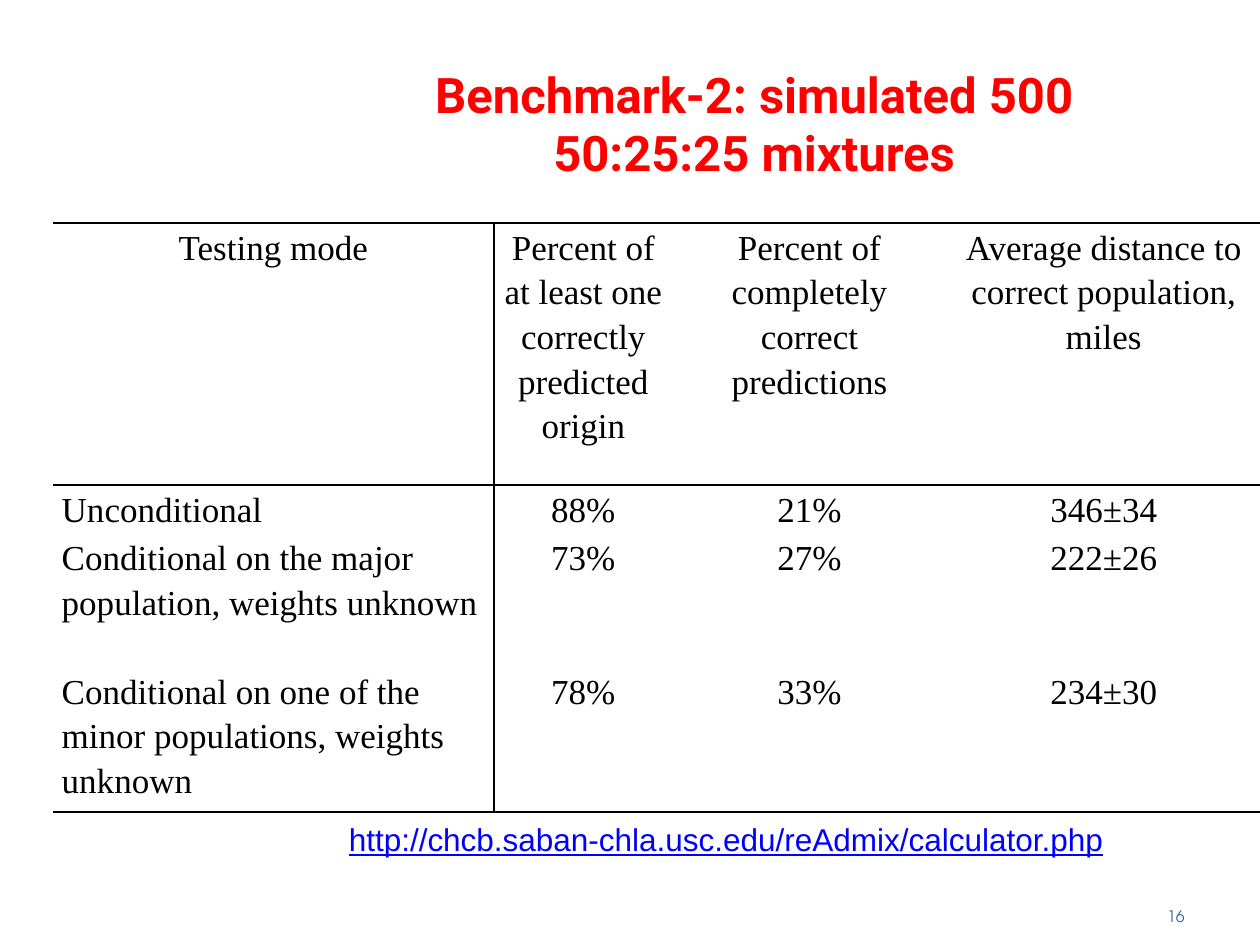
from lxml.etree import SubElement
from pptx import Presentation
from pptx.dml.color import RGBColor
from pptx.enum.text import MSO_ANCHOR, PP_ALIGN
from pptx.oxml.ns import qn
from pptx.util import Inches, Pt

RED = RGBColor(0xFF, 0x00, 0x00)
BLACK = RGBColor(0x00, 0x00, 0x00)
LINK_BLUE = RGBColor(0x00, 0x00, 0xFF)
NUMBER_BLUE = RGBColor(0x37, 0x60, 0x92)

COLUMN_WIDTHS = [3.5, 1.42, 2.17, 2.5]
ROW_HEIGHTS = [2.08, 0.36, 1.06, 1.06]
RESULTS = [
    ["Testing mode", "Percent of at least one correctly predicted origin",
     "Percent of completely correct predictions",
     "Average distance to correct population, miles"],
    ["Unconditional", "88%", "21%", "346±34"],
    ["Conditional on the major population, weights unknown",
     "73%", "27%", "222±26"],
    ["Conditional on one of the minor populations, weights unknown",
     "78%", "33%", "234±30"],
]


def write(frame, text, font, size, color, align=PP_ALIGN.LEFT, bold=False,
          underline=False, line_spacing=None):
    paragraph = frame.paragraphs[0]
    paragraph.alignment = align
    paragraph.line_spacing = line_spacing
    run = paragraph.add_run()
    run.text = text
    run.font.name = font
    run.font.size = Pt(size)
    run.font.color.rgb = color
    run.font.bold = bold
    run.font.underline = underline


def set_borders(cell, **widths):
    """Draw the sides given in points (L, R, T, B); clear the others."""
    properties = cell._tc.get_or_add_tcPr()
    for position, side in enumerate("LRTB"):
        width = widths.get(side, 0)
        line = SubElement(properties, qn(f"a:ln{side}"), w=str(Pt(width)))
        if width:
            fill = SubElement(line, qn("a:solidFill"))
            SubElement(fill, qn("a:srgbClr"), val=str(BLACK))
        else:
            SubElement(line, qn("a:noFill"))
        properties.insert(position, line)


class BenchmarkSlide:
    title_font = "Roboto"
    table_font = "Times New Roman"
    link_font = "Arial"
    number_font = "TeX Gyre Adventor"

    def __init__(self, presentation):
        self.slide = presentation.slides.add_slide(presentation.slide_layouts[5])

    def title(self, text, left, top, width, height):
        title = self.slide.shapes.title
        title.left, title.top = Inches(left), Inches(top)
        title.width, title.height = Inches(width), Inches(height)
        title.text_frame.vertical_anchor = MSO_ANCHOR.MIDDLE
        write(title.text_frame, text, self.title_font, 28, RED,
              align=PP_ALIGN.CENTER, bold=True)

    def label(self, text, left, top, width, height, wrap=True,
              anchor=MSO_ANCHOR.TOP, **text_format):
        box = self.slide.shapes.add_textbox(
            Inches(left), Inches(top), Inches(width), Inches(height))
        box.text_frame.word_wrap = wrap
        box.text_frame.vertical_anchor = anchor
        write(box.text_frame, text, **text_format)

    def table(self, rows, left, top, column_widths, row_heights):
        table = self.slide.shapes.add_table(
            len(rows), len(column_widths), Inches(left), Inches(top),
            Inches(sum(column_widths)), Inches(sum(row_heights))).table
        table.first_row = table.horz_banding = False
        for column, width in zip(table.columns, column_widths):
            column.width = Inches(width)
        for row, height in zip(table.rows, row_heights):
            row.height = Inches(height)
        for r, values in enumerate(rows):
            for c, value in enumerate(values):
                self.cell(table.cell(r, c), value, r, c, len(rows) - 1)

    def cell(self, cell, value, row, column, last_row):
        cell.fill.background()
        cell.margin_left = cell.margin_right = Inches(0.07)
        cell.margin_top = cell.margin_bottom = 0
        centred = row == 0 or column > 0
        write(cell.text_frame, value, self.table_font, 20, BLACK,
              align=PP_ALIGN.CENTER if centred else PP_ALIGN.LEFT,
              line_spacing=1.15)
        set_borders(cell,
                    L=1 if column == 1 else 0,
                    R=1 if column == 0 else 0,
                    T={0: 1.5, 1: 1}.get(row, 0),
                    B={0: 1, last_row: 1.5}.get(row, 0))


def main():
    presentation = Presentation()
    presentation.slide_width = Inches(10)
    presentation.slide_height = Inches(7.5)

    benchmark = BenchmarkSlide(presentation)
    benchmark.title("Benchmark-2: simulated 500 50:25:25 mixtures",
                    2.96, 0.41, 6.05, 1.13)
    benchmark.label("16", 7.17, 7.07, 2.33, 0.4, anchor=MSO_ANCHOR.MIDDLE,
                    font=benchmark.number_font, size=9, color=NUMBER_BLUE,
                    align=PP_ALIGN.RIGHT)
    benchmark.table(RESULTS, 0.42, 1.77, COLUMN_WIDTHS, ROW_HEIGHTS)
    benchmark.label("http://chcb.saban-chla.usc.edu/reAdmix/calculator.php",
                    2.67, 6.46, 6.34, 0.4, wrap=False,
                    font=benchmark.link_font, size=18, color=LINK_BLUE,
                    underline=True)
    presentation.save("out.pptx")


if __name__ == "__main__":
    main()
